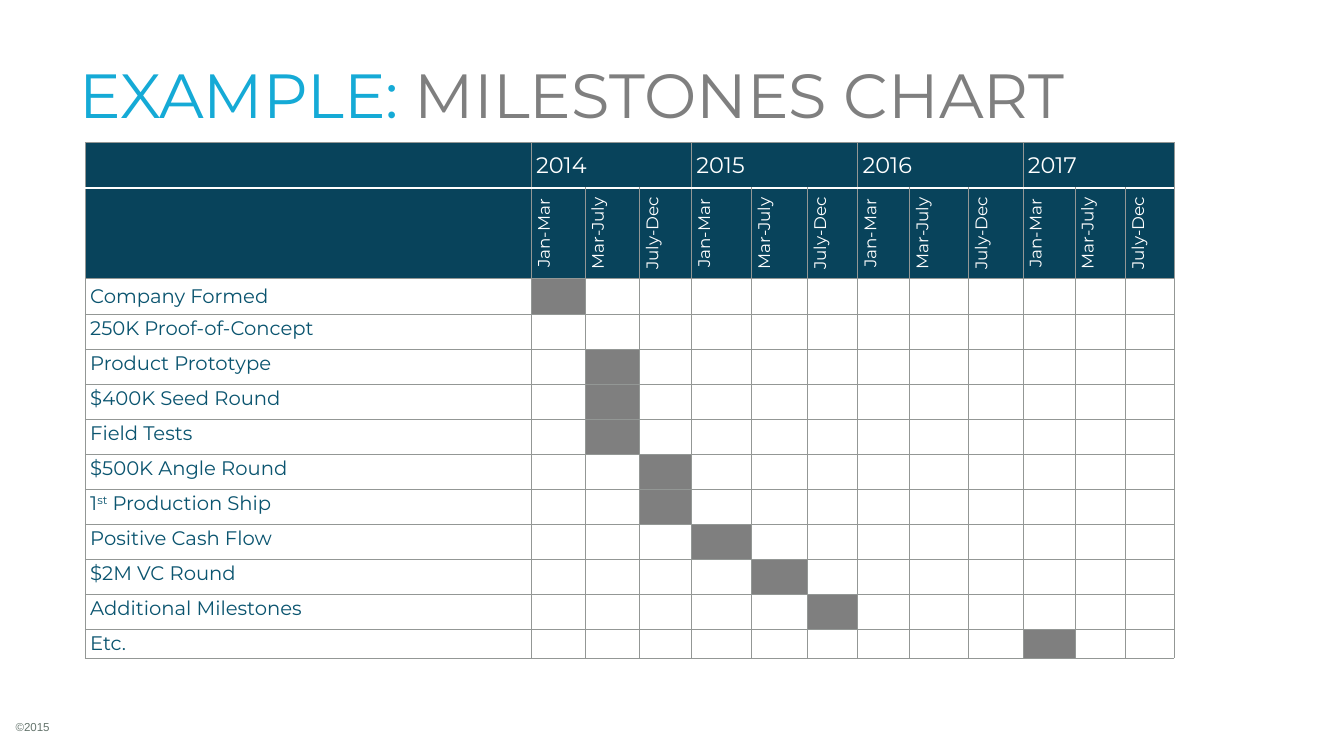
from itertools import product

from lxml.etree import SubElement
from pptx import Presentation
from pptx.dml.color import RGBColor
from pptx.enum.text import MSO_ANCHOR, MSO_AUTO_SIZE, PP_ALIGN
from pptx.oxml.ns import qn
from pptx.util import Inches, Pt

COLORS = {
    "accent": "15AAD6",
    "gray": "7F7F7F",
    "header": "08435B",
    "label": "0A546F",
    "rule": "939795",
    "footer": "64746C",
    "white": "FFFFFF",
}
FONT = "Montserrat"

COLUMN_WIDTHS = [8.85, 1.07, 1.08, 1.03, 1.19, 1.11, 1, 1.03, 1.17, 1.08, 1.03, 1, 0.97]
HEADER_HEIGHTS = [0.9, 1.8]
LAST_HEIGHT = 0.58
TABLE_HEIGHT = 10.23
YEARS = ["2014", "2015", "2016", "2017"]
PERIODS = ["Jan-Mar", "Mar-July", "July-Dec"]
MILESTONES = [
    (["Company Formed"], 1),
    (["250K Proof-of-Concept"], None),
    (["Product Prototype"], 2),
    (["$400K Seed Round"], 2),
    (["Field Tests"], 2),
    (["$500K Angle Round"], 3),
    (["1", "st", " Production Ship"], 3),
    (["Positive Cash Flow"], 4),
    (["$2M VC Round"], 5),
    (["Additional Milestones"], 6),
    (["Etc."], 10),
]


def add_run(paragraph, text, size, color, font=FONT):
    run = paragraph.add_run()
    run.text = text
    run.font.size = Pt(size)
    run.font.name = font
    run.font.color.rgb = RGBColor.from_string(COLORS[color])
    return run


def add_border(cell, side, color, width):
    line = SubElement(cell._tc.get_or_add_tcPr(), qn(f"a:ln{side}"), w=str(Pt(width)))
    fill = SubElement(line, qn("a:solidFill"))
    SubElement(fill, qn("a:srgbClr"), val=COLORS[color])


def style_cell(cell, row, fill):
    for side in "LRTB":
        on_white_rule = (row, side) in [(0, "B"), (1, "T")]
        add_border(cell, side, *(("white", 2) if on_white_rule else ("rule", 0.75)))
    cell.fill.solid()
    cell.fill.fore_color.rgb = RGBColor.from_string(COLORS[fill])


def add_title(slide):
    title = slide.shapes.title
    title.left, title.top = Inches(1.33), Inches(0.6)
    title.width, title.height = Inches(24), Inches(2.5)
    frame = title.text_frame
    frame.auto_size = MSO_AUTO_SIZE.NONE
    frame.vertical_anchor = MSO_ANCHOR.MIDDLE
    frame.margin_left = frame.margin_right = Inches(0.24)
    frame.margin_top = frame.margin_bottom = Inches(0.12)
    heading = frame.paragraphs[0]
    heading.alignment = PP_ALIGN.LEFT
    add_run(heading, "EXAMPLE:", 89, "accent")
    add_run(heading, " MILESTONES CHART", 89, "gray")


def add_copyright(slide):
    box = slide.shapes.add_textbox(Inches(0.31), Inches(14.14), Inches(0.8), Inches(0.39))
    frame = box.text_frame
    frame.word_wrap = False
    frame.vertical_anchor = MSO_ANCHOR.MIDDLE
    frame.margin_left = frame.margin_right = frame.margin_top = frame.margin_bottom = 0
    notice = frame.paragraphs[0]
    notice.line_spacing = Pt(33)
    add_run(notice, "©2015", 16.5, "footer", "Arial")


def fill_headers(schedule):
    for index, year in enumerate(YEARS):
        first = 1 + index * len(PERIODS)
        cell = schedule.cell(0, first)
        cell.merge(schedule.cell(0, first + len(PERIODS) - 1))
        cell.vertical_anchor = MSO_ANCHOR.MIDDLE
        add_run(cell.text_frame.paragraphs[0], year, 32, "white")
    for column, (_, period) in enumerate(product(YEARS, PERIODS), 1):
        cell = schedule.cell(1, column)
        cell.vertical_anchor = MSO_ANCHOR.MIDDLE
        cell._tc.get_or_add_tcPr().set("vert", "vert270")
        paragraph = cell.text_frame.paragraphs[0]
        paragraph.alignment = PP_ALIGN.CENTER
        add_run(paragraph, period, 24, "white")


def fill_milestones(schedule):
    for row, (parts, _) in enumerate(MILESTONES, len(HEADER_HEIGHTS)):
        cell = schedule.cell(row, 0)
        if row == len(HEADER_HEIGHTS):
            cell.vertical_anchor = MSO_ANCHOR.MIDDLE
        for part in parts:
            run = add_run(cell.text_frame.paragraphs[0], part, 28, "label")
            if part == "st":
                run.font._element.set("baseline", "30000")


def add_schedule(slide):
    regular = len(MILESTONES) - 1
    pitch = (TABLE_HEIGHT - sum(HEADER_HEIGHTS) - LAST_HEIGHT) / regular
    heights = HEADER_HEIGHTS + [pitch] * regular + [LAST_HEIGHT]
    schedule = slide.shapes.add_table(
        len(heights), len(COLUMN_WIDTHS), Inches(1.69), Inches(2.83),
        Inches(sum(COLUMN_WIDTHS)), Inches(TABLE_HEIGHT),
    ).table
    schedule.first_row = schedule.horz_banding = False
    for column, width in zip(schedule.columns, COLUMN_WIDTHS):
        column.width = Inches(width)
    for row, height in zip(schedule.rows, heights):
        row.height = Inches(height)
    active_columns = [None] * len(HEADER_HEIGHTS) + [active for _, active in MILESTONES]
    for row, column in product(range(len(heights)), range(len(COLUMN_WIDTHS))):
        body_fill = "gray" if column == active_columns[row] else "white"
        fill = "header" if row < len(HEADER_HEIGHTS) else body_fill
        style_cell(schedule.cell(row, column), row, fill)
    fill_headers(schedule)
    fill_milestones(schedule)


def main():
    deck = Presentation()
    deck.slide_width, deck.slide_height = Inches(26.67), Inches(15)
    slide = deck.slides.add_slide(deck.slide_layouts[5])
    add_copyright(slide)
    add_title(slide)
    add_schedule(slide)
    deck.save("out.pptx")


if __name__ == "__main__":
    main()
